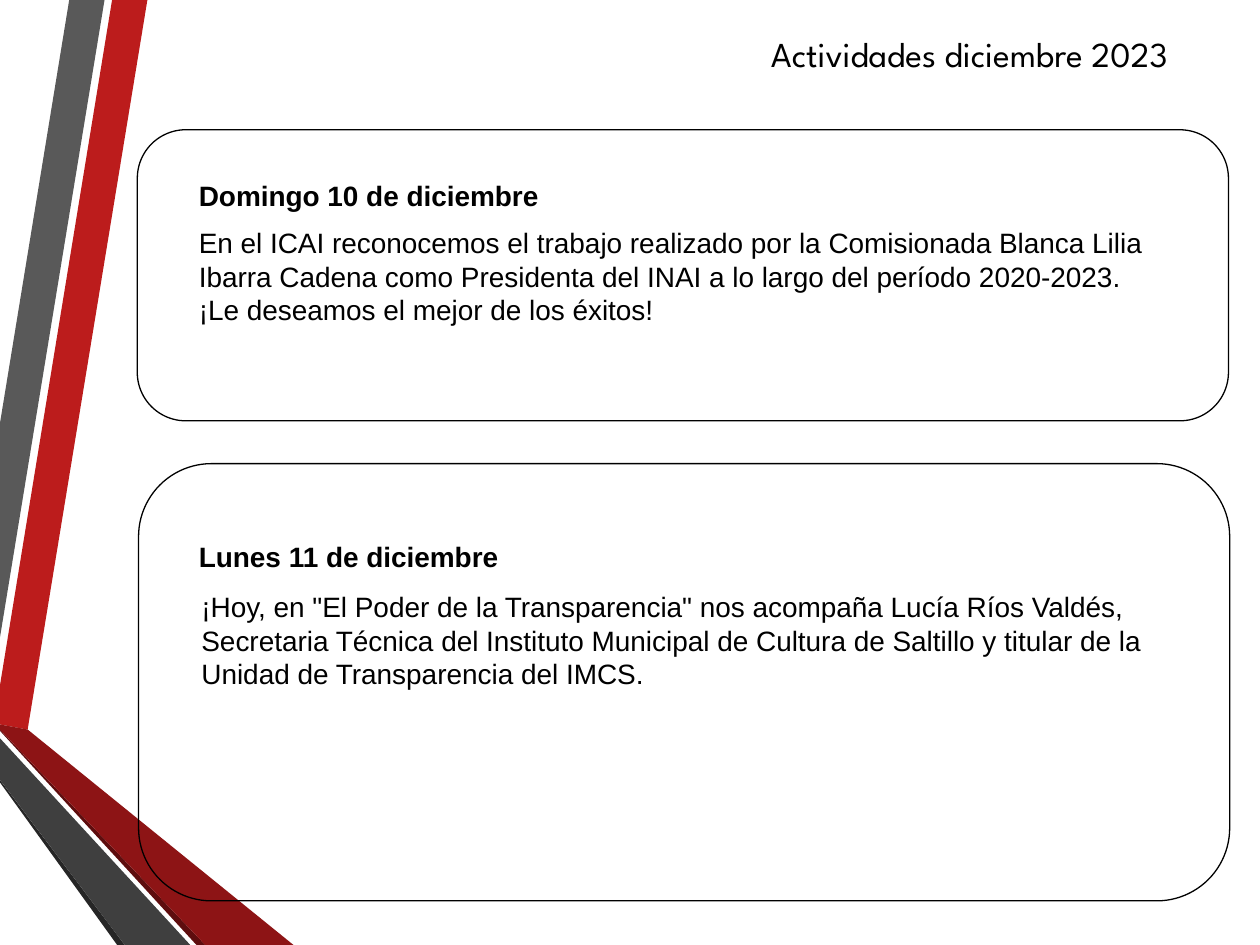
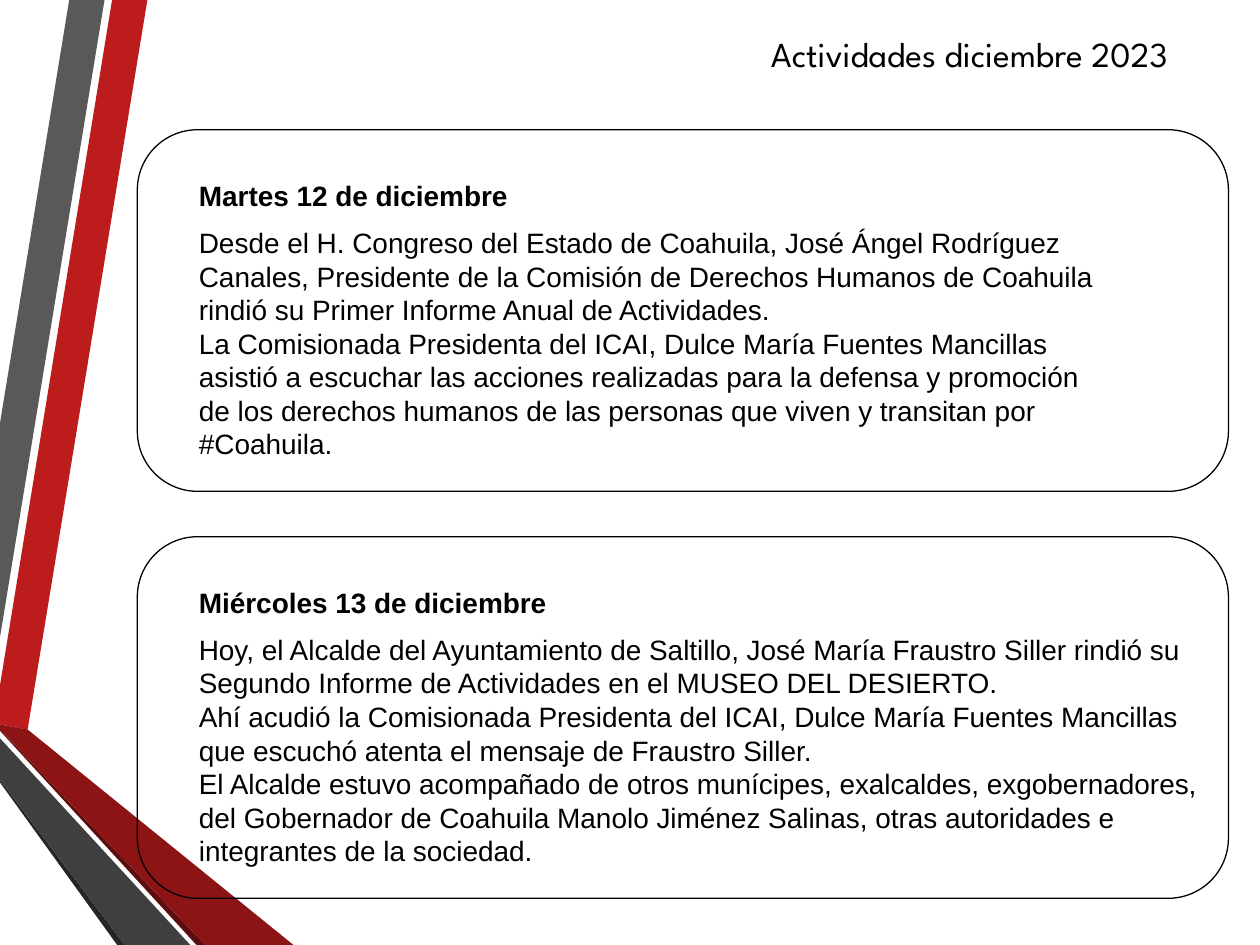
from pptx import Presentation
from pptx.dml.color import RGBColor
from pptx.enum.shapes import MSO_SHAPE
from pptx.enum.text import MSO_ANCHOR, PP_ALIGN
from pptx.util import Inches, Pt

PANEL = MSO_SHAPE.FLOWCHART_ALTERNATE_PROCESS
TOP = MSO_ANCHOR.TOP
CENTER = PP_ALIGN.CENTER
TITLE_ONLY = 5

BLACK = "000000"
TITLE = "Actividades diciembre 2023"
TITLE_FONT = "League Spartan"
BODY_FONT = "Arial"
TEXT_LEFT = 1.48
HEADING_WIDTH = 7.88

# Ribbon colour and corner points in inches, from back to front
RIBBONS = [
    ("BC1C1C", [(0, 5.44), (0, 5.75), (0.22, 5.79), (1.17, 0), (0.89, 0)]),
    ("595959", [(0.83, 0), (0.55, 0), (0, 3.36), (0, 5.06)]),
    ("262626", [(0, 6.19), (0, 6.21), (0.93, 7.5), (0.99, 7.5)]),
    ("5E0D0E", [(0, 5.79), (0, 5.8), (1.56, 7.5), (1.63, 7.5)]),
    ("8D1415", [(0, 5.79), (1.63, 7.5), (2.33, 7.5), (0.22, 5.79), (0, 5.75)]),
    ("3F3F3F", [(0, 6.19), (0.99, 7.5), (1.51, 7.5), (0, 5.86)]),
]


def color(hex_string):
    return RGBColor.from_string(hex_string)


def add_span(para, text, size, font, bold=False):
    span = para.add_run()
    span.text = text
    span.font.size = Pt(size)
    span.font.name = font
    span.font.bold = bold
    span.font.color.rgb = color(BLACK)


def add_ribbons(page):
    for fill, corners in RIBBONS:
        points = [(Inches(x), Inches(y)) for x, y in corners]
        builder = page.shapes.build_freeform(*points[0])
        builder.add_line_segments(points[1:], close=True)
        ribbon = builder.convert_to_shape()
        ribbon.shadow.inherit = False
        ribbon.fill.solid()
        ribbon.fill.fore_color.rgb = color(fill)
        ribbon.line.fill.background()


def set_title(page):
    title = page.shapes.title
    title.left, title.top = Inches(5.63), Inches(0.21)
    title.width, title.height = Inches(4.13), Inches(0.44)
    title.text_frame.vertical_anchor = TOP
    para = title.text_frame.paragraphs[0]
    para.alignment = CENTER
    add_span(para, TITLE, 20, TITLE_FONT)


def add_panel(page, left, top, height):
    panel = page.shapes.add_shape(
        PANEL, Inches(left), Inches(top), Inches(8.66), Inches(height))
    panel.shadow.inherit = False
    panel.fill.background()
    panel.line.color.rgb = color(BLACK)
    panel.line.width = Pt(0.75)


def add_text(page, left, top, width, height, paragraphs, bold=False):
    box = page.shapes.add_textbox(
        Inches(left), Inches(top), Inches(width), Inches(height))
    frame = box.text_frame
    frame.word_wrap = True
    for index, text in enumerate(paragraphs):
        para = frame.add_paragraph() if index else frame.paragraphs[0]
        add_span(para, text, 16, BODY_FONT, bold)


def add_activity(page, panel, heading_top, heading, body, paragraphs):
    """Place one day's outline (left, top, height), heading and body text."""
    add_text(page, TEXT_LEFT, heading_top, HEADING_WIDTH, 0.37, [heading], bold=True)
    add_panel(page, *panel)
    add_text(page, *body, paragraphs)


def add_page(deck):
    page = deck.slides.add_slide(deck.slide_layouts[TITLE_ONLY])
    add_ribbons(page)
    set_title(page)
    return page


def main():
    deck = Presentation()
    deck.slide_width, deck.slide_height = Inches(10), Inches(7.5)

    page = add_page(deck)
    add_activity(
        page, (1.09, 1.03, 2.31), 1.37, "Domingo 10 de diciembre",
        (TEXT_LEFT, 1.74, 8.24, 0.91),
        ["En el ICAI reconocemos el trabajo realizado por la Comisionada Blanca "
         "Lilia Ibarra Cadena como Presidenta del INAI a lo largo del período "
         "2020-2023.",
         "¡Le deseamos el mejor de los éxitos!"])
    add_activity(
        page, (1.1, 3.68, 3.47), 4.23, "Lunes 11 de diciembre",
        (1.5, 4.63, 7.88, 0.91),
        ['¡Hoy, en "El Poder de la Transparencia" nos acompaña Lucía Ríos '
         "Valdés, Secretaria Técnica del Instituto Municipal de Cultura de "
         "Saltillo y titular de la Unidad de Transparencia del IMCS."])

    page = add_page(deck)
    add_activity(
        page, (1.09, 1.03, 2.87), 1.37, "Martes 12 de diciembre",
        (TEXT_LEFT, 1.74, 7.42, 1.99),
        ["Desde el H. Congreso del Estado de Coahuila, José Ángel Rodríguez "
         "Canales, Presidente de la Comisión de Derechos Humanos de Coahuila "
         "rindió su Primer Informe Anual de Actividades.",
         "La Comisionada Presidenta del ICAI, Dulce María Fuentes Mancillas "
         "asistió a escuchar las acciones realizadas para la defensa y promoción "
         "de los derechos humanos de las personas que viven y transitan por "
         "#Coahuila."])
    add_activity(
        page, (1.09, 4.26, 2.87), 4.6, "Miércoles 13 de diciembre",
        (TEXT_LEFT, 4.97, 8.24, 1.99),
        ["Hoy, el Alcalde del Ayuntamiento de Saltillo, José María Fraustro "
         "Siller rindió su Segundo Informe de Actividades en el MUSEO DEL "
         "DESIERTO.",
         "Ahí acudió la Comisionada Presidenta del ICAI, Dulce María Fuentes "
         "Mancillas que escuchó atenta el mensaje de Fraustro Siller.",
         "El Alcalde estuvo acompañado de otros munícipes, exalcaldes, "
         "exgobernadores, del Gobernador de Coahuila Manolo Jiménez Salinas, "
         "otras autoridades e integrantes de la sociedad."])

    deck.save("out.pptx")


if __name__ == "__main__":
    main()
